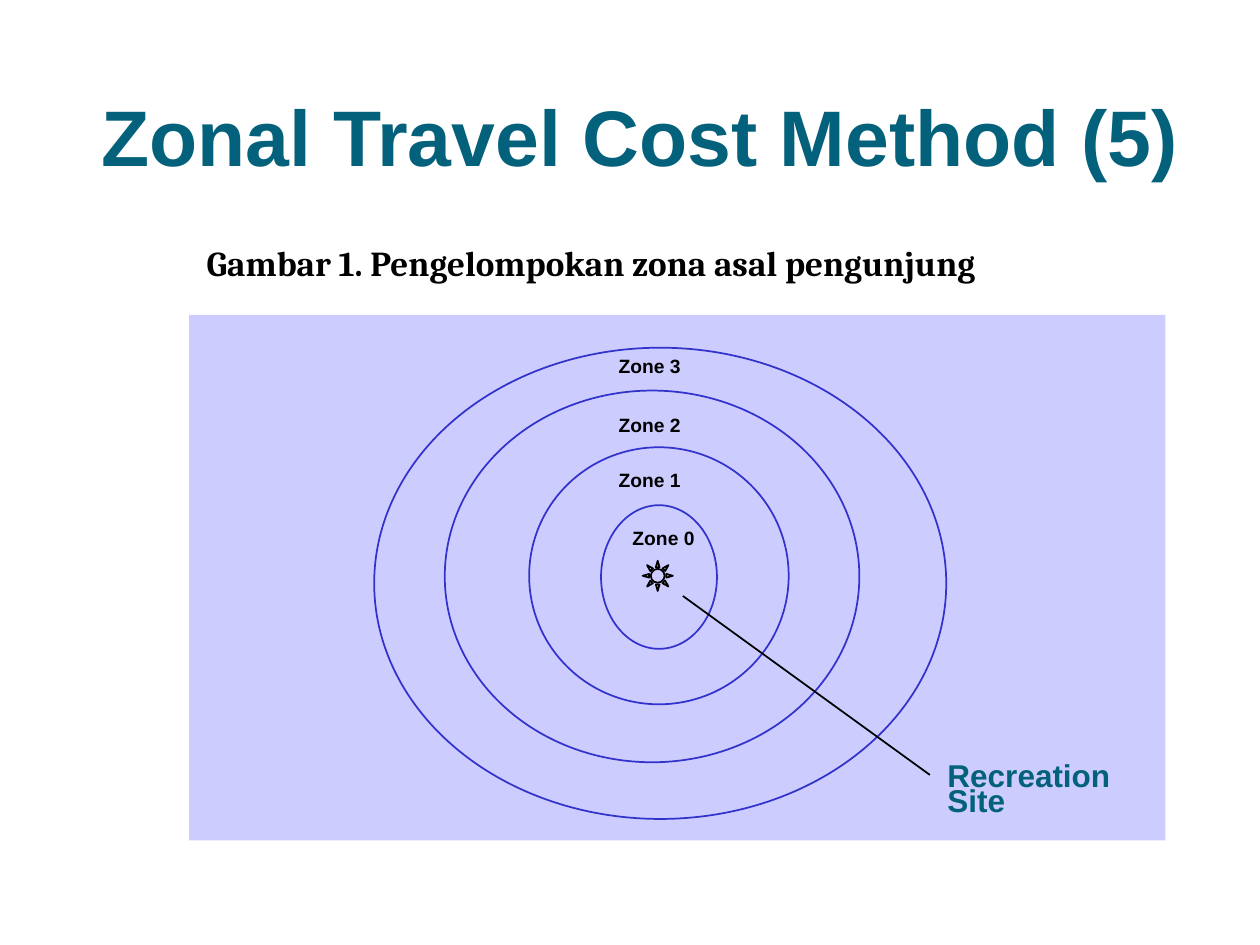
from math import cos, pi, sin

from pptx import Presentation
from pptx.dml.color import RGBColor
from pptx.enum.shapes import MSO_CONNECTOR, MSO_SHAPE
from pptx.enum.text import MSO_ANCHOR, PP_ALIGN
from pptx.oxml.ns import qn
from pptx.util import Inches, Pt
from lxml import etree

RECT, OVAL = MSO_SHAPE.RECTANGLE, MSO_SHAPE.OVAL
STRAIGHT = MSO_CONNECTOR.STRAIGHT
LEFT, CENTER = PP_ALIGN.LEFT, PP_ALIGN.CENTER
TOP, BOTTOM = MSO_ANCHOR.TOP, MSO_ANCHOR.BOTTOM

COLORS = {"teal": "04617B", "black": "000000", "panel": "CCCCFF", "ring": "3333CC"}

TITLE = "Zonal Travel Cost Method (5)"
CAPTION = "Gambar 1. Pengelompokan zona asal pengunjung"
SITE_LABEL = "Recreation\nSite"
PANEL = (1.5, 2.5, 7.75, 4.17)
SUN_X, SUN_Y, SUN_DISC = 5.22, 4.57, 0.11
RAYS, RAY_TIP, RAY_BASE, RAY_SPREAD = 8, 0.12, 0.07, 0.21
POINTER = (7.38, 6.15, 5.42, 4.73)
ZONES = [
    ("Zone 3", (4.91, 2.81), (2.97, 2.76, 4.54, 3.74)),
    ("Zone 2", (4.91, 3.28), (3.53, 3.1, 3.29, 2.95)),
    ("Zone 1", (4.91, 3.72), (4.2, 3.55, 2.06, 2.04)),
    ("Zone 0", (5.02, 4.18), (4.77, 4.01, 0.92, 1.14)),
]

prs = Presentation()
prs.slide_width, prs.slide_height = Inches(10), Inches(7.5)
s = prs.slides.add_slide(prs.slide_layouts[6])


def rgb(name):
    return RGBColor.from_string(COLORS[name])


def add_text(text, box, size, color="black", font="Arial", align=LEFT,
             anchor=TOP, wrap=False, spacing=None):
    tf = s.shapes.add_textbox(*map(Inches, box)).text_frame
    tf.margin_left = tf.margin_right = tf.margin_top = tf.margin_bottom = 0
    tf.word_wrap, tf.vertical_anchor = wrap, anchor
    for i, line in enumerate(text.split("\n")):
        p = tf.paragraphs[0] if i == 0 else tf.add_paragraph()
        p.alignment = align
        if spacing:
            p.line_spacing = Pt(spacing)
        r = p.add_run()
        r.text = line
        r.font.name, r.font.size, r.font.bold = font, Pt(size), True
        r.font.color.rgb = rgb(color)


def style(sp, fill=None, line=None):
    sp.shadow.inherit = False
    if fill:
        sp.fill.solid()
        sp.fill.fore_color.rgb = rgb(fill)
    else:
        sp.fill.background()
    if line:
        sp.line.color.rgb = rgb(line)
        sp.line.width = Pt(1)
    else:
        sp.line.fill.background()


def add_shape(kind, box, **look):
    style(s.shapes.add_shape(kind, *map(Inches, box)), **look)


def sun_point(radius, angle):
    return Inches(SUN_X + radius * cos(angle)), Inches(SUN_Y + radius * sin(angle))


def add_ray(angle):
    tip = sun_point(RAY_TIP, angle)
    base = [sun_point(RAY_BASE, angle + d) for d in (-RAY_SPREAD, RAY_SPREAD)]
    ray = s.shapes.build_freeform(*tip)
    ray.add_line_segments(base, close=True)
    style(ray.convert_to_shape(), line="black")


add_shape(RECT, PANEL, fill="panel")
add_text(TITLE, (0.58, 0.92, 9, 0.53), 45, color="teal",
         align=CENTER, anchor=BOTTOM, wrap=True)
add_text(CAPTION, (1.64, 1.92, 7.5, 0.4), 20, font="Cambria", wrap=True)

for label, (x, y), ring in ZONES:
    add_shape(OVAL, ring, line="ring")
    add_text(label, (x, y, 0.5, 0.18), 11)

for i in range(RAYS):
    add_ray(2 * pi * i / RAYS)
add_shape(OVAL, (SUN_X - SUN_DISC / 2, SUN_Y - SUN_DISC / 2, SUN_DISC, SUN_DISC),
          line="black")

pointer = s.shapes.add_connector(STRAIGHT, *map(Inches, POINTER))
pointer.line.color.rgb = rgb("black")
pointer.line.width = Pt(1)
etree.SubElement(pointer._element.spPr, qn("a:effectLst"))
add_text(SITE_LABEL, (7.52, 6.1, 1.5, 0.4), 18, color="teal", wrap=True, spacing=14.4)

prs.save("out.pptx")
